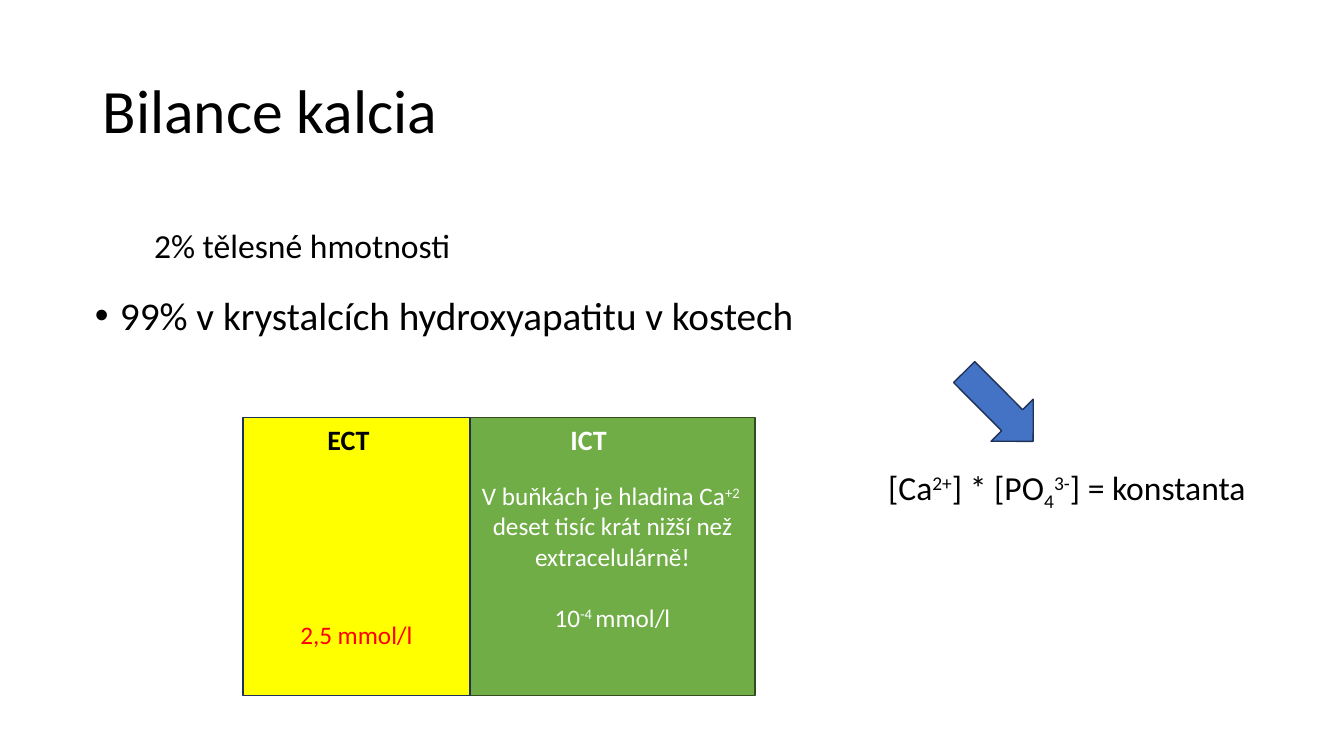
"""Build the calcium balance slide."""
from lxml.etree import SubElement
from pptx import Presentation
from pptx.dml.color import RGBColor
from pptx.enum.shapes import MSO_SHAPE
from pptx.enum.text import MSO_ANCHOR, MSO_AUTO_SIZE, PP_ALIGN
from pptx.oxml.ns import qn
from pptx.util import Inches, Pt

HUES = {
    "black": "000000", "white": "FFFFFF", "red": "FF0000",
    "yellow": "FFFF00", "green": "70AD47", "blue": "4472C4",
    "moss": "314C1F", "navy": "1E3256",
}
UP, DOWN = 30, -25


class Deck:
    def __init__(self, font="Calibri"):
        self.font = font
        self.file = Presentation()
        self.file.slide_width = Inches(13.33)
        self.file.slide_height = Inches(7.5)
        self.slide = self.file.slides.add_slide(self.file.slide_layouts[1])

    def hue(self, name):
        return RGBColor.from_string(HUES[name])

    def area(self, x, y, wide, high):
        across = self.file.slide_width / 100
        down = self.file.slide_height / 100
        return [int(x * across), int(y * down), int(wide * across), int(high * down)]

    def fill_in(self, para, runs, size, hue, bold=False):
        for text, shift in runs:
            run = para.add_run()
            run.text = text
            font = run.font
            font.name, font.size, font.bold = self.font, Pt(size), bold
            font.color.rgb = self.hue(hue)
            if shift:
                run._r.get_or_add_rPr().set("baseline", str(shift * 1000))

    def holder(self, index, area, text, size, space):
        shape = self.slide.placeholders[index]
        shape.left, shape.top, shape.width, shape.height = self.area(*area)
        shape.text_frame.auto_size = MSO_AUTO_SIZE.NONE
        para = shape.text_frame.paragraphs[0]
        para.alignment, para.line_spacing = PP_ALIGN.LEFT, space
        self.fill_in(para, [(text, 0)], size, "black")
        return shape

    def title(self, area, text):
        shape = self.holder(0, area, text, 44, 0.9)
        shape.text_frame.vertical_anchor = MSO_ANCHOR.MIDDLE

    def bullet(self, area, text):
        shape = self.holder(1, area, text, 28, 0.8)
        shape.text_frame.vertical_anchor = MSO_ANCHOR.TOP
        para = shape.text_frame.paragraphs[0]
        para.space_before = Pt(10)
        props = para._p.get_or_add_pPr()
        props.set("marL", str(Inches(0.25)))
        props.set("indent", str(-Inches(0.25)))
        SubElement(props, qn("a:buFont")).set("typeface", "Arial")
        SubElement(props, qn("a:buChar")).set("char", "•")

    def label(self, area, runs, size=24, hue="black", bold=False):
        frame = self.slide.shapes.add_textbox(*self.area(*area)).text_frame
        frame.word_wrap = False
        frame.auto_size = MSO_AUTO_SIZE.SHAPE_TO_FIT_TEXT
        self.fill_in(frame.paragraphs[0], runs, size, hue, bold)

    def shape(self, kind, area, fill, line, turn=0):
        shape = self.slide.shapes.add_shape(kind, *self.area(*area))
        shape.shadow.inherit = False
        shape.rotation = turn
        shape.fill.solid()
        shape.fill.fore_color.rgb = self.hue(fill)
        shape.line.color.rgb = self.hue(line)
        shape.line.width = Pt(1)
        return shape

    def box(self, area, fill, line, paras, hue, anchor=MSO_ANCHOR.MIDDLE, foot=0.05):
        frame = self.shape(MSO_SHAPE.RECTANGLE, area, fill, line).text_frame
        frame.word_wrap = True
        frame.vertical_anchor = anchor
        frame.margin_bottom = Inches(foot)
        for i, (runs, gap) in enumerate(paras):
            para = frame.add_paragraph() if i else frame.paragraphs[0]
            para.alignment, para.space_before = PP_ALIGN.CENTER, Pt(gap)
            self.fill_in(para, runs, 18, hue)


def main():
    deck = Deck()
    top, high = 55.2, 36.8
    deck.title((6.9, 5.33, 86.25, 19.33), "Bilance kalcia")
    deck.bullet((6.3, 39.07, 90, 6.67), "99% v krystalcích hydroxyapatitu v kostech")
    deck.box((34.96, top, 21.23, high), "green", "moss", [
        ([("V buňkách je hladina Ca", 0), ("+2 ", UP)], 0),
        ([("deset tisíc krát nižší než extracelulárně!", 0)], 0),
        ([("10", 0), ("-4 ", UP), ("mmol/l", 0)], 22),
    ], "white")
    deck.label((10.73, 29.07, 25.66, 6.67), [("2% tělesné hmotnosti", 0)])
    deck.box((18.08, top, 16.88, high), "yellow", "navy",
             [([("2,5 mmol/l", 0)], 0)], "red", MSO_ANCHOR.BOTTOM, 0.46)
    deck.label((23.63, top, 5.7, 5.87), [("ECT", 0)], 20, "black", True)
    deck.label((41.71, top, 4.88, 5.87), [("ICT", 0)], 20, "white", True)
    deck.label((65.34, 61.07, 31.58, 6.67), [
        ("[Ca", 0), ("2+", UP), ("] * [PO", 0), ("4", DOWN),
        ("3-", UP), ("] = konstanta", 0),
    ])
    deck.shape(MSO_SHAPE.DOWN_ARROW, (72.09, 47.33, 4.43, 12.93), "blue", "navy", 315.1)
    deck.file.save("out.pptx")


if __name__ == "__main__":
    main()
